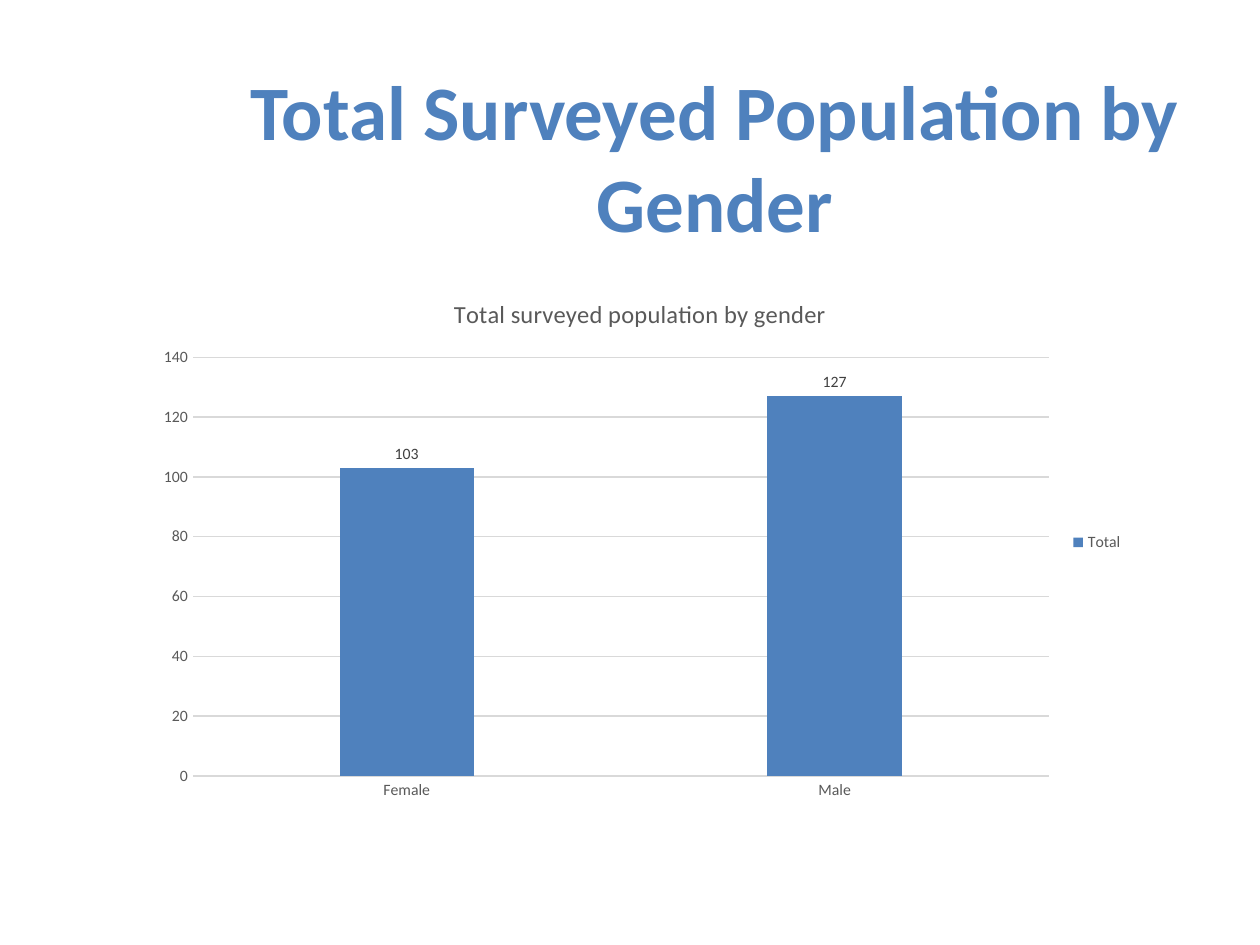
from pptx import Presentation
from pptx.chart.data import CategoryChartData
from pptx.dml.color import RGBColor
from pptx.enum.chart import XL_CHART_TYPE, XL_LABEL_POSITION, XL_LEGEND_POSITION, XL_TICK_MARK
from pptx.enum.text import MSO_ANCHOR, PP_ALIGN
from pptx.util import Pt

COLUMN = XL_CHART_TYPE.COLUMN_CLUSTERED
OUTSIDE_END = XL_LABEL_POSITION.OUTSIDE_END
LEGEND_RIGHT = XL_LEGEND_POSITION.RIGHT
NO_TICK = XL_TICK_MARK.NONE
MIDDLE = MSO_ANCHOR.MIDDLE
CENTER = PP_ALIGN.CENTER

TITLE = "Total Surveyed Population by Gender"
CHART_TITLE = "Total surveyed population by gender"
SERIES_NAME = "Total"
POPULATION = {"Female": 103, "Male": 127}

FONT = "Calibri"
COLORS = {"blue": "4F81BD", "text": "595959", "label": "404040", "grid": "D9D9D9", "black": "000000"}
EMU_PER_PX = 914400 // 126
SLIDE_SIZE = (1260, 945)
TITLE_BOX = (233, 76, 964, 159)
CHART_BOX = (144, 275, 992, 535)


def px(*lengths):
    return [length * EMU_PER_PX for length in lengths]


def color(name):
    return RGBColor.from_string(COLORS[name])


def set_font(font, size, color_name, bold=False):
    font.name = FONT
    font.size = Pt(size)
    font.bold = bold
    font.color.rgb = color(color_name)


def set_line(line):
    line.color.rgb = color("grid")
    line.width = Pt(0.75)


def add_title(slide):
    title = slide.shapes.title
    title.left, title.top, title.width, title.height = px(*TITLE_BOX)
    frame = title.text_frame
    frame.text = TITLE
    frame.word_wrap = True
    frame.vertical_anchor = MIDDLE
    paragraph = frame.paragraphs[0]
    paragraph.alignment = CENTER
    set_font(paragraph.runs[0].font, 44, "blue", bold=True)


def add_population_chart(slide):
    data = CategoryChartData()
    data.categories = list(POPULATION)
    data.add_series(SERIES_NAME, list(POPULATION.values()))
    chart = slide.shapes.add_chart(COLUMN, *px(*CHART_BOX), data).chart
    set_font(chart.font, 10, "black")

    chart.has_title = True
    title_frame = chart.chart_title.text_frame
    title_frame.text = CHART_TITLE
    set_font(title_frame.paragraphs[0].runs[0].font, 14, "text")
    chart.chart_title.include_in_layout = False

    chart.has_legend = True
    chart.legend.position = LEGEND_RIGHT
    chart.legend.include_in_layout = False
    set_font(chart.legend.font, 9, "text")

    for axis in (chart.category_axis, chart.value_axis):
        axis.major_tick_mark = axis.minor_tick_mark = NO_TICK
        set_font(axis.tick_labels.font, 9, "text")
    set_line(chart.category_axis.format.line)
    value_axis = chart.value_axis
    value_axis.minimum_scale, value_axis.maximum_scale, value_axis.major_unit = 0, 140, 20
    value_axis.format.line.fill.background()
    value_axis.has_major_gridlines = True
    set_line(value_axis.major_gridlines.format.line)

    plot = chart.plots[0]
    plot.vary_by_categories = False
    plot.gap_width = 219
    plot.overlap = -27
    series = plot.series[0]
    series.format.fill.solid()
    series.format.fill.fore_color.rgb = color("blue")
    labels = series.data_labels
    labels.show_value = True
    labels.position = OUTSIDE_END
    set_font(labels.font, 9, "label")


def main():
    presentation = Presentation()
    presentation.slide_width, presentation.slide_height = px(*SLIDE_SIZE)
    slide = presentation.slides.add_slide(presentation.slide_layouts[5])
    add_title(slide)
    add_population_chart(slide)
    presentation.save("out.pptx")


if __name__ == "__main__":
    main()
